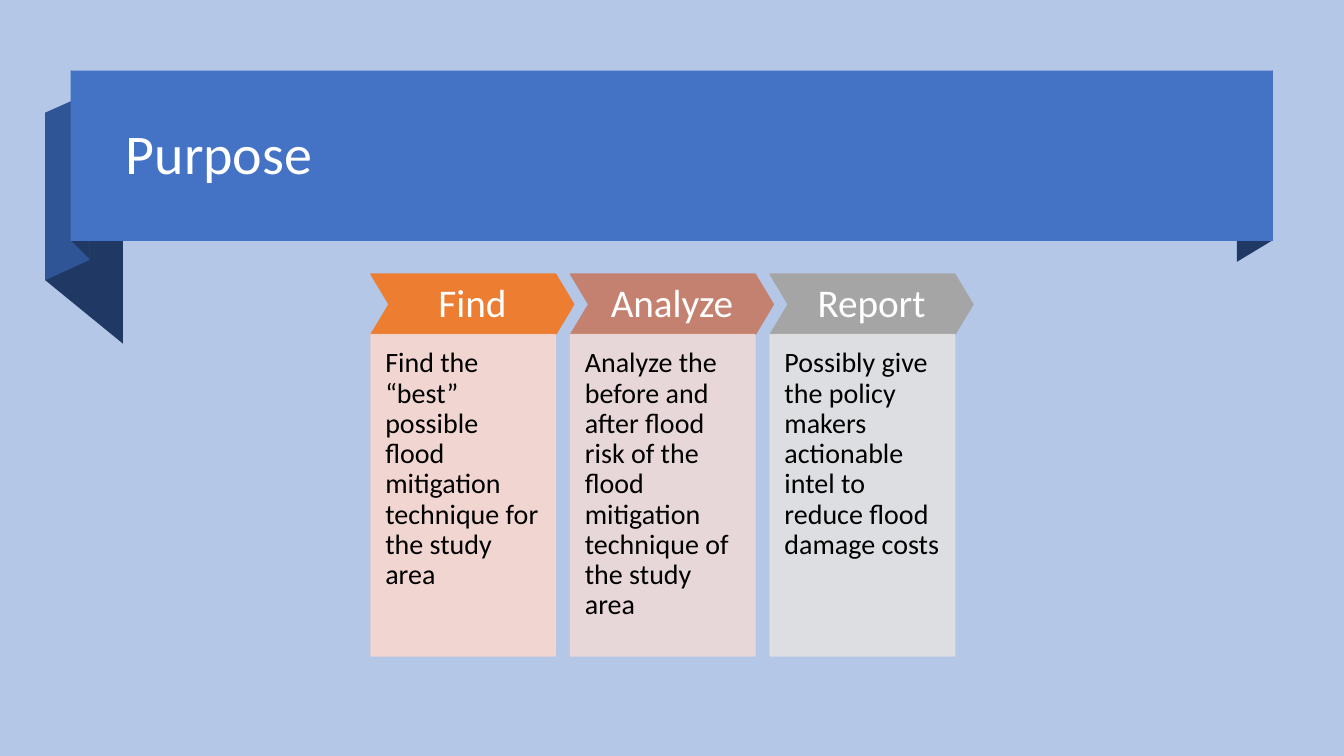
from dataclasses import dataclass

from lxml.etree import SubElement
from pptx import Presentation
from pptx.dml.color import RGBColor
from pptx.enum.shapes import MSO_SHAPE
from pptx.enum.text import MSO_ANCHOR, MSO_AUTO_SIZE, PP_ALIGN
from pptx.oxml.ns import qn
from pptx.shapes.autoshape import Shape
from pptx.slide import Slide
from pptx.util import Cm, Pt

SKY = RGBColor(0xB4, 0xC7, 0xE7)
BLUE = RGBColor(0x44, 0x72, 0xC4)
MID_BLUE = RGBColor(0x2F, 0x55, 0x97)
NAVY = RGBColor(0x20, 0x38, 0x64)
ORANGE = RGBColor(0xED, 0x7D, 0x31)
PALE_ORANGE = RGBColor(0xF8, 0xD7, 0xCE)
CLAY = RGBColor(0xC4, 0x81, 0x70)
PALE_CLAY = RGBColor(0xED, 0xD9, 0xD7)
GRAY = RGBColor(0xA5, 0xA5, 0xA5)
PALE_GRAY = RGBColor(0xE1, 0xE1, 0xE1)
WHITE = RGBColor(0xFF, 0xFF, 0xFF)
BLACK = RGBColor(0x00, 0x00, 0x00)

FONT = "Calibri"
COLUMN_LEFT, COLUMN_PITCH = 9.35, 5.03
HEADER_TOP, HEADER_WIDTH, HEADER_HEIGHT = 6.91, 5.11, 1.52
BODY_WIDTH, BODY_HEIGHT = 4.65, 8.1


@dataclass(frozen=True)
class Fold:
    color: RGBColor
    corners: tuple[tuple[float, float], ...]


@dataclass(frozen=True)
class Step:
    heading: str
    detail: str
    color: RGBColor
    pale_color: RGBColor


RIBBON_FOLDS = (
    Fold(NAVY, ((32.08, 6.05), (31.17, 6.6), (31.17, 2.31), (32.08, 1.78))),
    Fold(NAVY, ((3.1, 8.66), (1.14, 7.06), (1.14, 2.84), (3.1, 4.45))),
    Fold(MID_BLUE, ((2.26, 6.55), (1.14, 7.06), (1.14, 2.84), (2.26, 2.34))),
    Fold(NAVY, ((2.26, 6.53), (1.8, 6.07), (1.8, 1.78), (2.26, 2.26))),
)

STEPS = (
    Step("Find",
         "Find the “best” possible flood mitigation technique for the study area",
         ORANGE, PALE_ORANGE),
    Step("Analyze",
         "Analyze the before and after flood risk of the flood mitigation "
         "technique of the study area",
         CLAY, PALE_CLAY),
    Step("Report",
         "Possibly give the policy makers actionable intel to reduce flood damage costs",
         GRAY, PALE_GRAY),
)


def write_text(box: Shape, text: str, *, size: float, color: RGBColor,
               align: PP_ALIGN = PP_ALIGN.LEFT,
               anchor: MSO_ANCHOR = MSO_ANCHOR.MIDDLE,
               inset: float = 0.25, inset_bottom: float | None = None) -> None:
    frame = box.text_frame
    frame.word_wrap = True
    frame.auto_size = MSO_AUTO_SIZE.NONE
    frame.vertical_anchor = anchor
    frame.margin_left = frame.margin_right = frame.margin_top = Cm(inset)
    frame.margin_bottom = Cm(inset if inset_bottom is None else inset_bottom)
    para = frame.paragraphs[0]
    para.alignment = align
    para.line_spacing = 0.9
    span = para.add_run()
    span.text = text
    span.font.name = FONT
    span.font.size = Pt(size)
    span.font.color.rgb = color


def paint(shape: Shape, color: RGBColor, *, outlined: bool = False) -> None:
    shape.shadow.inherit = False
    shape.fill.solid()
    shape.fill.fore_color.rgb = color
    if outlined:
        shape.line.color.rgb = color
        shape.line.width = Pt(1)
    else:
        shape.line.fill.background()


def set_opacity(shape: Shape, percent: int) -> None:
    """Apply the opacity to both the fill and the outline."""
    for color in shape.element.spPr.iter(qn("a:srgbClr")):
        SubElement(color, qn("a:alpha"), val=str(percent * 1000))


def add_box(slide: Slide, kind: MSO_SHAPE, left: float, top: float,
            width: float, height: float) -> Shape:
    return slide.shapes.add_shape(kind, Cm(left), Cm(top), Cm(width), Cm(height))


def add_fold(slide: Slide, fold: Fold) -> None:
    start, *others = [(Cm(x), Cm(y)) for x, y in fold.corners]
    builder = slide.shapes.build_freeform(*start)
    builder.add_line_segments(others, close=True)
    paint(builder.convert_to_shape(), fold.color)


def add_title(slide: Slide, text: str) -> None:
    title = slide.shapes.title
    title.left, title.top = Cm(2.92), Cm(2.11)
    title.width, title.height = Cm(28.63), Cm(3.68)
    write_text(title, text, size=40, color=WHITE)
    # Appending the placeholder again brings it in front of the ribbon.
    title.element.getparent().append(title.element)


def add_step(slide: Slide, step: Step, left: float) -> None:
    header = add_box(slide, MSO_SHAPE.CHEVRON, left, HEADER_TOP,
                     HEADER_WIDTH, HEADER_HEIGHT)
    header.adjustments[0] = 0.3
    paint(header, step.color, outlined=True)
    write_text(header, step.heading, size=28, color=WHITE,
               align=PP_ALIGN.CENTER, inset=0.18)

    body = add_box(slide, MSO_SHAPE.RECTANGLE, left, HEADER_TOP + HEADER_HEIGHT,
                   BODY_WIDTH, BODY_HEIGHT)
    paint(body, step.pale_color, outlined=True)
    set_opacity(body, 90)
    write_text(body, step.detail, size=20, color=BLACK,
               anchor=MSO_ANCHOR.TOP, inset=0.36, inset_bottom=0.74)


def main() -> None:
    deck = Presentation()
    deck.slide_width, deck.slide_height = Cm(33.87), Cm(19.05)
    slide = deck.slides.add_slide(deck.slide_layouts.get_by_name("Title Only"))
    slide.background.fill.solid()
    slide.background.fill.fore_color.rgb = SKY

    for fold in RIBBON_FOLDS:
        add_fold(slide, fold)
    paint(add_box(slide, MSO_SHAPE.RECTANGLE, 1.78, 1.78, 30.3, 4.29), BLUE)
    add_title(slide, "Purpose")
    for index, step in enumerate(STEPS):
        add_step(slide, step, COLUMN_LEFT + index * COLUMN_PITCH)

    deck.save("out.pptx")


if __name__ == "__main__":
    main()
